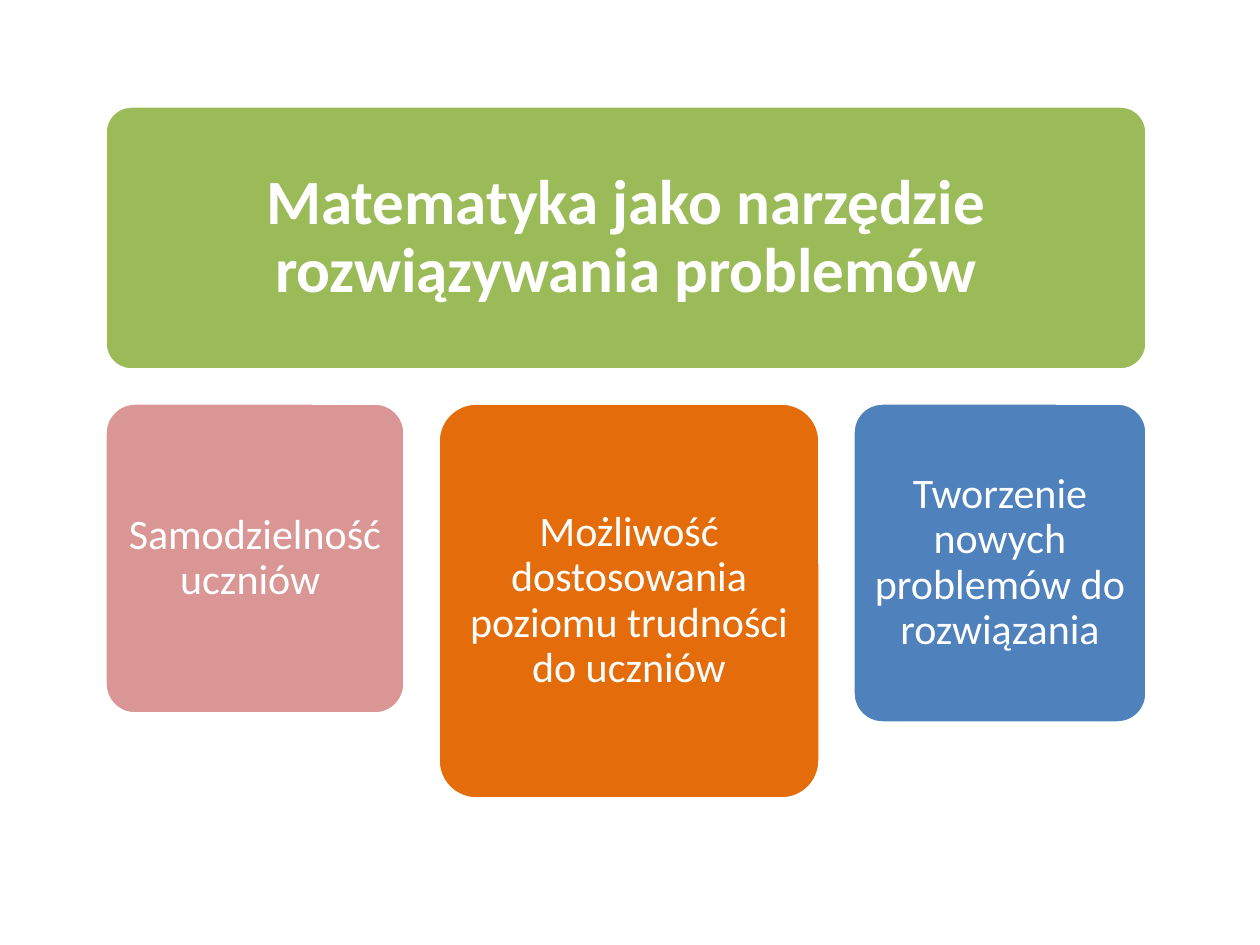
"""Build a slide with a title banner above a row of three cards."""
import pptx
import pptx.dml.color
import pptx.enum.shapes
import pptx.enum.text
import pptx.util

RGBColor = pptx.dml.color.RGBColor
WHITE = RGBColor(0xFF, 0xFF, 0xFF)
GREEN = RGBColor(0x9B, 0xBB, 0x59)
PINK = RGBColor(0xD9, 0x96, 0x94)
ORANGE = RGBColor(0xE4, 0x6C, 0x0A)
BLUE = RGBColor(0x4F, 0x81, 0xBD)

LEFT, GAP = 105, 33
BANNER_TOP, BANNER_HEIGHT = 106, 264
CARD_TOP = 403
TITLE = "Matematyka jako narzędzie rozwiązywania problemów"
CARDS = [
    ("Samodzielność uczniów ", PINK, 300, 311),
    ("Możliwość dostosowania poziomu trudności do uczniów", ORANGE, 382, 396),
    ("Tworzenie nowych problemów do rozwiązania", BLUE, 294, 320),
]


def px(n):
    return pptx.util.Emu(round(n * 914400 / 126))


def set_text(sp, text, size, inset, bold=False):
    tf = sp.text_frame
    tf.text = text
    tf.word_wrap = True
    tf.auto_size = pptx.enum.text.MSO_AUTO_SIZE.NONE
    tf.vertical_anchor = pptx.enum.text.MSO_ANCHOR.MIDDLE
    tf.margin_left = tf.margin_right = px(inset)
    tf.margin_top = tf.margin_bottom = px(inset)
    p = tf.paragraphs[0]
    p.alignment = pptx.enum.text.PP_ALIGN.CENTER
    p.line_spacing = 0.9
    font = p.runs[0].font
    font.name = "Calibri"
    font.size = pptx.util.Pt(size)
    font.bold = bold
    font.color.rgb = WHITE


def add_card(s, x, y, w, h, color):
    sp = s.shapes.add_shape(pptx.enum.shapes.MSO_SHAPE.ROUNDED_RECTANGLE,
                            px(x), px(y), px(w), px(h))
    sp.adjustments[0] = 0.1
    sp.shadow.inherit = False
    sp.fill.solid()
    sp.fill.fore_color.rgb = color
    sp.line.color.rgb = WHITE
    sp.line.width = pptx.util.Pt(2)
    return sp


def add_banner(s, width):
    sp = add_card(s, LEFT, BANNER_TOP, width, BANNER_HEIGHT, GREEN)
    title = s.shapes.title
    title.left, title.top = sp.left, sp.top
    title.width, title.height = sp.width, sp.height
    set_text(title, TITLE, 36, 27, bold=True)
    sp._element.addnext(title._element)


def main():
    prs = pptx.Presentation()
    prs.slide_width, prs.slide_height = px(1260), px(945)
    s = prs.slides.add_slide(prs.slide_layouts[5])
    add_banner(s, sum(w for _, _, w, _ in CARDS) + GAP * (len(CARDS) - 1))
    x = LEFT
    for text, color, w, h in CARDS:
        set_text(add_card(s, x, CARD_TOP, w, h, color), text, 24, 13)
        x += w + GAP
    prs.save("out.pptx")


if __name__ == "__main__":
    main()
